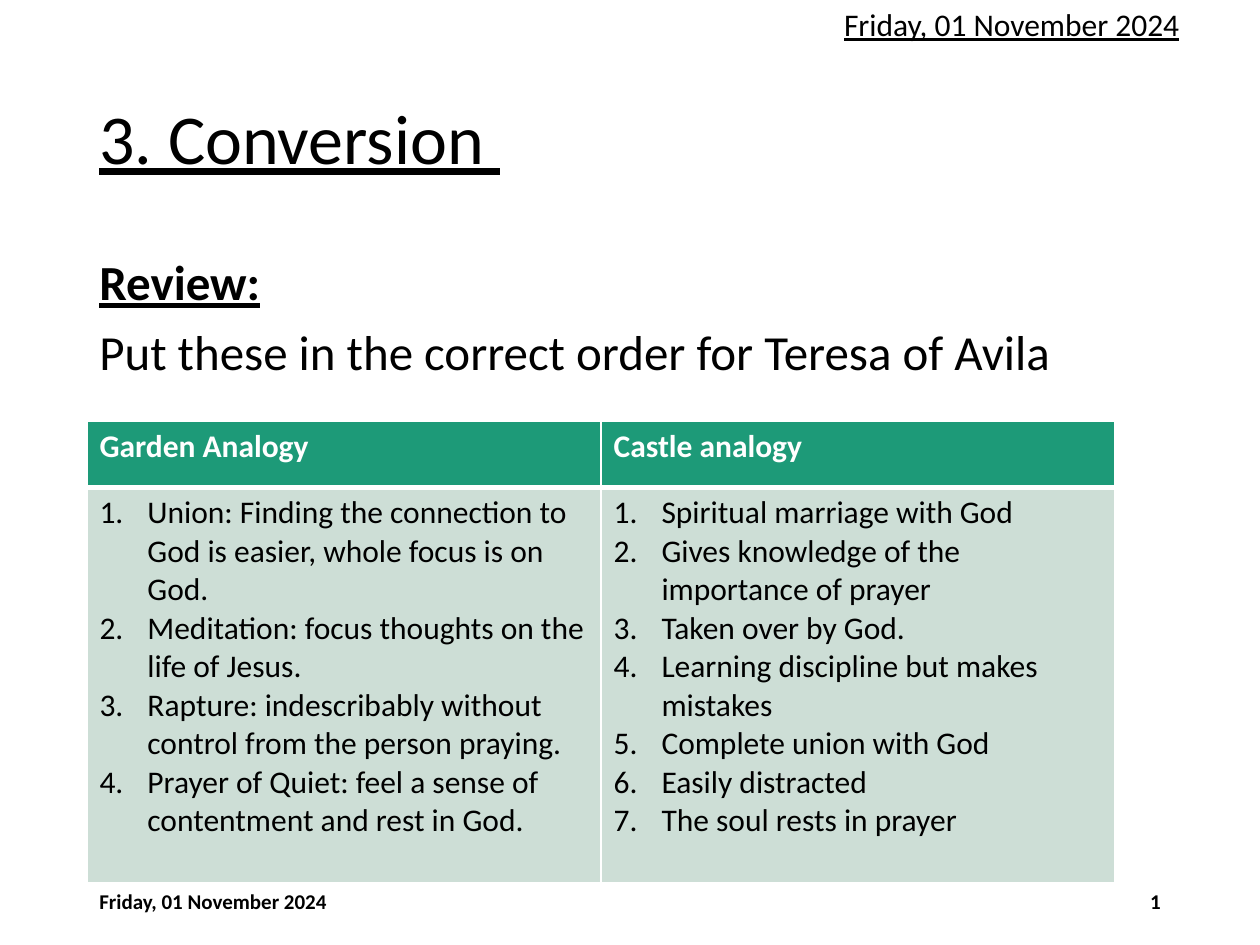
from dataclasses import dataclass

from lxml.etree import SubElement
from pptx import Presentation
from pptx.dml.color import RGBColor
from pptx.enum.text import MSO_ANCHOR, PP_ALIGN
from pptx.oxml.ns import qn
from pptx.util import Inches, Pt


@dataclass(frozen=True)
class Theme:
    font: str = "Calibri"
    black: str = "000000"
    white: str = "FFFFFF"
    header_fill: str = "1D9A78"
    body_fill: str = "CDDED6"
    title_size: int = 40
    body_size: int = 28
    table_size: int = 18
    footer_size: int = 12


THEME = Theme()
DATE = "Friday, 01 November 2024"
ANALOGIES = {
    "Garden Analogy": [
        "Union: Finding the connection to God is easier, whole focus is on God.",
        "Meditation: focus thoughts on the life of Jesus.",
        "Rapture: indescribably without control from the person praying.",
        "Prayer of Quiet: feel a sense of contentment and rest in God.",
    ],
    "Castle analogy": [
        "Spiritual marriage with God",
        "Gives knowledge of the importance of prayer",
        "Taken over by God.",
        "Learning discipline but makes mistakes",
        "Complete union with God",
        "Easily distracted",
        "The soul rests in prayer",
    ],
}


def write_paragraphs(frame, texts, size, color=THEME.black, bold=False, underline=False):
    for index, text in enumerate(texts):
        paragraph = frame.add_paragraph() if index else frame.paragraphs[0]
        paragraph.text = text
        font = paragraph.font
        font.name, font.size = THEME.font, Pt(size)
        font.bold, font.underline = bold, underline
        font.color.rgb = RGBColor.from_string(color)
    return frame.paragraphs


def add_text(slide, box, texts, size, anchor=MSO_ANCHOR.TOP, **style):
    frame = slide.shapes.add_textbox(*map(Inches, box)).text_frame
    frame.word_wrap = True
    frame.vertical_anchor = anchor
    return write_paragraphs(frame, texts, size, **style)


def add_title(slide, box):
    paragraphs = add_text(slide, box, ["3. Conversion "], THEME.title_size,
                          MSO_ANCHOR.MIDDLE, underline=True)
    paragraphs[0].line_spacing = 0.9


def add_review(slide, box):
    texts = ["Review:", "Put these in the correct order for Teresa of Avila"]
    paragraphs = add_text(slide, box, texts, THEME.body_size)
    for paragraph in paragraphs:
        paragraph.line_spacing = 0.9
        paragraph.space_before = Pt(10)
    paragraphs[0].font.bold = paragraphs[0].font.underline = True


def add_footer(slide, box):
    left, top, width, height = box
    field_width = 2.25
    fields = [(left, DATE, PP_ALIGN.LEFT),
              (left + width - field_width, "1", PP_ALIGN.RIGHT)]
    for field_left, text, alignment in fields:
        paragraphs = add_text(slide, (field_left, top, field_width, height), [text],
                              THEME.footer_size, MSO_ANCHOR.MIDDLE, bold=True)
        paragraphs[0].alignment = alignment


def number_paragraph(paragraph):
    properties = paragraph._p.get_or_add_pPr()
    properties.set("marL", str(Inches(0.38)))
    properties.set("indent", str(-Inches(0.38)))
    SubElement(properties, qn("a:buFont"), typeface="+mj-lt")
    SubElement(properties, qn("a:buAutoNum"), type="arabicPeriod")


def style_cell(cell, fill, top_width, bottom_width):
    properties = cell._tc.get_or_add_tcPr()
    widths = {"L": 1, "R": 1, "T": top_width, "B": bottom_width}
    for side, width in widths.items():
        line = SubElement(properties, qn(f"a:ln{side}"), w=str(Pt(width)))
        SubElement(SubElement(line, qn("a:solidFill")), qn("a:srgbClr"), val=THEME.white)
    cell.fill.solid()
    cell.fill.fore_color.rgb = RGBColor.from_string(fill)


def add_analogy_table(slide, box, header_height):
    table = slide.shapes.add_table(2, len(ANALOGIES), *map(Inches, box)).table
    table.rows[0].height = Inches(header_height)
    table.rows[1].height = Inches(box[3] - header_height)
    for column, (heading, stages) in enumerate(ANALOGIES.items()):
        header, body = table.cell(0, column), table.cell(1, column)
        style_cell(header, THEME.header_fill, 1, 3)
        style_cell(body, THEME.body_fill, 3, 1)
        write_paragraphs(header.text_frame, [heading], THEME.table_size,
                         THEME.white, bold=True)
        for paragraph in write_paragraphs(body.text_frame, stages, THEME.table_size):
            number_paragraph(paragraph)


def main():
    presentation = Presentation()
    presentation.slide_width, presentation.slide_height = Inches(10), Inches(7.5)
    slide = presentation.slides.add_slide(presentation.slide_layouts[6])
    add_title(slide, (0.69, 0.4, 8.62, 1.45))
    add_text(slide, (6.6, -0.01, 3.48, 0.4), [DATE], THEME.table_size, underline=True)
    add_review(slide, (0.69, 2, 8.62, 4.76))
    add_footer(slide, (0.69, 6.95, 8.62, 0.4))
    add_analogy_table(slide, (0.69, 3.34, 8.16, 3.67), 0.53)
    presentation.save("out.pptx")


if __name__ == "__main__":
    main()
